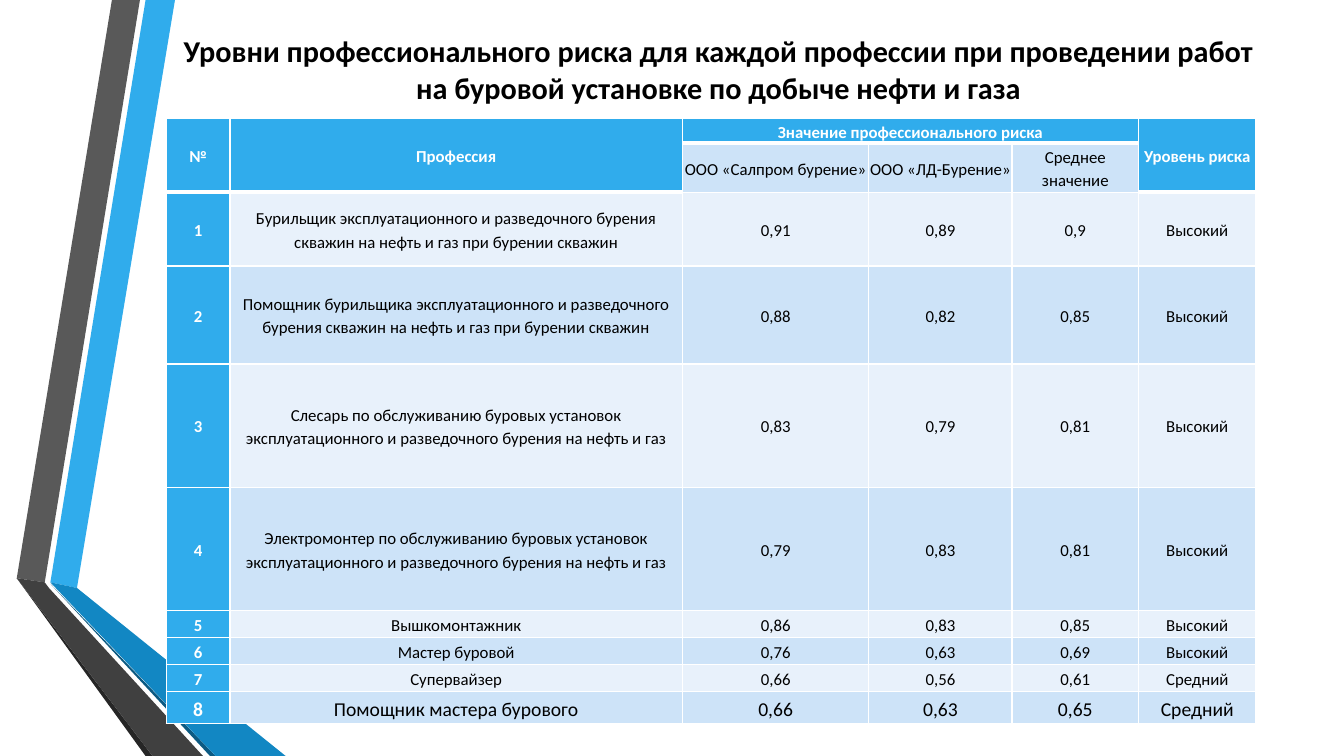
"""Build a slide with a table of occupational risk levels by profession."""
from lxml.etree import SubElement
from pptx import Presentation
from pptx.dml.color import RGBColor
from pptx.enum.text import MSO_ANCHOR, PP_ALIGN
from pptx.oxml.ns import qn
from pptx.util import Pt

BLUE, PALE, LIGHT = "30ACEC", "E8F1FB", "CDE3F8"
WHITE, BLACK = "FFFFFF", "000000"

RIBBONS = [
    (BLUE, [(36, 416.2), (55.4, 419.8), (124.6, 0), (104.4, 0)]),
    ("595959", [(100, 0), (80, 0), (11.5, 412.6), (31.7, 415.6)]),
    ("262626", [(11.5, 412.6), (104.4, 540), (108.7, 540)]),
    ("0C5A82", [(36, 416.9), (149.8, 540), (154.1, 540)]),
    ("1287C3", [(36, 416.5), (154.1, 540), (203.8, 540), (55.4, 419.8)]),
    ("404040", [(145.4, 540), (34.6, 419.8), (31.7, 415.6), (11.5, 412.6), (108.7, 540)]),
]

TITLE = ("Уровни профессионального риска для каждой профессии при проведении работ "
         "на буровой установке по добыче нефти и газа")

DRILLING = "бурения скважин на нефть и газ при бурении скважин"
MAINTENANCE = ("по обслуживанию буровых установок эксплуатационного "
               "и разведочного бурения на нефть и газ")
HEADINGS = [
    ["№", "Профессия", "Значение профессионального риска", "", "", "Уровень риска"],
    ["", "", "ООО «Салпром бурение»", "ООО «ЛД-Бурение»", "Среднее значение", ""],
]
RISKS = [
    (f"Бурильщик эксплуатационного и разведочного {DRILLING}", "0,91", "0,89", "0,9", "Высокий"),
    (f"Помощник бурильщика эксплуатационного и разведочного {DRILLING}",
     "0,88", "0,82", "0,85", "Высокий"),
    (f"Слесарь {MAINTENANCE}", "0,83", "0,79", "0,81", "Высокий"),
    (f"Электромонтер {MAINTENANCE}", "0,79", "0,83", "0,81", "Высокий"),
    ("Вышкомонтажник", "0,86", "0,83", "0,85", "Высокий"),
    ("Мастер буровой", "0,76", "0,63", "0,69", "Высокий"),
    ("Супервайзер", "0,66", "0,56", "0,61", "Средний"),
    ("Помощник мастера бурового", "0,66", "0,63", "0,65", "Средний"),
]
COLUMN_WIDTHS = [45.5, 323.2, 133.2, 102.3, 90.4, 83.8]
ROW_HEIGHTS = [17.8, 35, 52.6, 70, 88.2, 88.2, 19.3, 19.3, 19.3, 22.8]
MERGES = [(0, 0, 1, 0), (0, 1, 1, 1), (0, 2, 0, 4), (0, 5, 1, 5)]


def color(code):
    """Turn a hex string into a colour."""
    return RGBColor.from_string(code)


def apply_format(target, values):
    """Set each attribute of the target from a dict."""
    for name, value in values.items():
        setattr(target, name, value)


class RiskSlide:
    """Hold the text style and the slide being built."""

    font_name = "Calibri"

    def __init__(self, deck):
        """Add a blank slide to the deck."""
        self.slide = deck.slides.add_slide(deck.slide_layouts[6])

    def wording(self, frame, text, size, ink, bold, spacing):
        """Put one centred paragraph into a text frame."""
        paragraph = frame.paragraphs[0]
        apply_format(paragraph, {"alignment": PP_ALIGN.CENTER, "line_spacing": spacing})
        run = paragraph.add_run()
        run.text = text
        apply_format(run.font, {"name": self.font_name, "size": Pt(size), "bold": bold})
        run.font.color.rgb = color(ink)

    def ribbon(self, fill, points):
        """Draw one filled polygon."""
        builder = self.slide.shapes.build_freeform(*points[0], scale=Pt(1))
        builder.add_line_segments(points[1:], close=True)
        band = builder.convert_to_shape()
        band.shadow.inherit = False
        band.fill.solid()
        band.fill.fore_color.rgb = color(fill)
        band.line.fill.background()

    def title(self, text, left, top, width, height):
        """Add the slide heading."""
        box = self.slide.shapes.add_textbox(Pt(left), Pt(top), Pt(width), Pt(height))
        apply_format(box.text_frame, {"word_wrap": True, "vertical_anchor": MSO_ANCHOR.MIDDLE})
        self.wording(box.text_frame, text, 21.6, BLACK, True, 1.0)

    def borders(self, cell, widths):
        """Give the cell white borders of the given widths."""
        properties = cell._tc.get_or_add_tcPr()
        for side, width in widths.items():
            edge = SubElement(properties, qn(f"a:ln{side}"), w=str(Pt(width)))
            paint = SubElement(edge, qn("a:solidFill"))
            SubElement(paint, qn("a:srgbClr"), val=WHITE)

    def cell(self, cell, text, fill, size, inset, widths):
        """Style one table cell and fill in its text."""
        self.borders(cell, widths)
        cell.fill.solid()
        cell.fill.fore_color.rgb = color(fill)
        margins = {f"margin_{side}": Pt(inset) for side in ("left", "right", "top", "bottom")}
        apply_format(cell, {"vertical_anchor": MSO_ANCHOR.MIDDLE, **margins})
        if text:
            strong = fill == BLUE
            self.wording(cell.text_frame, text, size, WHITE if strong else BLACK, strong, 1.15)

    def risk_table(self, rows, left, top):
        """Add the table of risks with its two heading rows."""
        table = self.slide.shapes.add_table(
            len(rows), len(COLUMN_WIDTHS), Pt(left), Pt(top),
            Pt(sum(COLUMN_WIDTHS)), Pt(sum(ROW_HEIGHTS))).table
        for column, width in zip(table.columns, COLUMN_WIDTHS):
            column.width = Pt(width)
        for row, height in zip(table.rows, ROW_HEIGHTS):
            row.height = Pt(height)
        for first_row, first_col, last_row, last_col in MERGES:
            table.cell(first_row, first_col).merge(table.cell(last_row, last_col))
        for r, texts in enumerate(rows):
            size = 14 if r == len(rows) - 1 else 12
            for c, text in enumerate(texts):
                heading = r == 0 or (r == 1 and c in (0, 1, 5))
                fill = BLUE if heading or c == 0 else LIGHT if r % 2 else PALE
                widths = {"L": 1, "R": 1, **({"T": 1} if r == 0 else {}),
                          "B": 3 if heading else 1}
                self.cell(table.cell(r, c), text, fill, size, 0 if c else 0.7, widths)


def main():
    """Build and save the deck."""
    deck = Presentation()
    apply_format(deck, {"slide_width": Pt(960), "slide_height": Pt(540)})
    page = RiskSlide(deck)
    for fill, points in RIBBONS:
        page.ribbon(fill, points)
    page.title(TITLE, 118.8, 33.8, 789, 31)
    numbered = [(str(number), *risk) for number, risk in enumerate(RISKS, 1)]
    page.risk_table(HEADINGS + numbered, 118.8, 84.6)
    deck.save("out.pptx")


if __name__ == "__main__":
    main()
